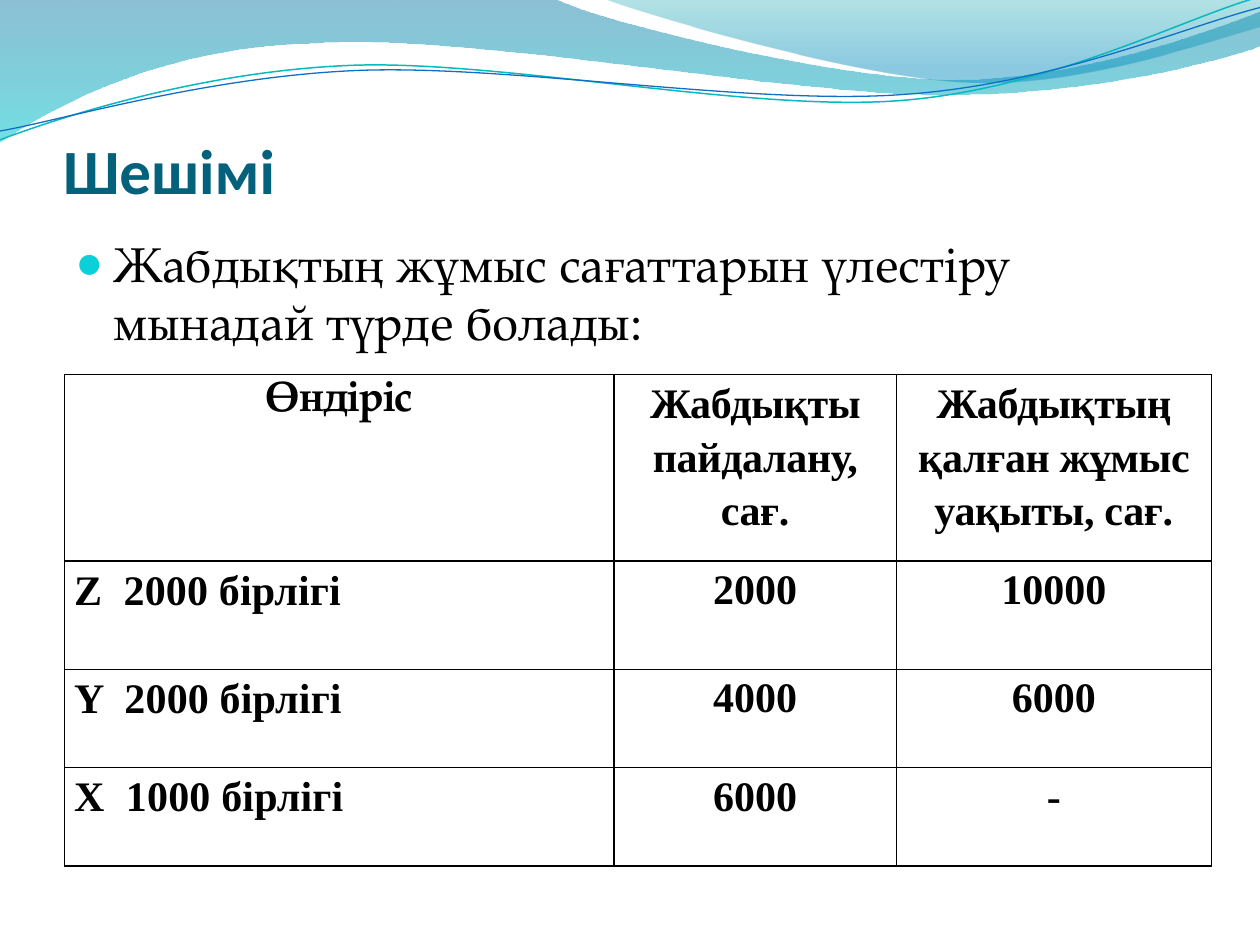
import lxml.etree
import pptx
import pptx.util
import pptx.dml.color
import pptx.enum.text
import pptx.oxml.ns
from pptx.util import Inches, Pt

COLORS = {
    "title": "04617B", "text": "000000", "bullet": "0BD0D9", "border": "000000",
    "deep": "0074A1", "cyan": "00C6CF", "teal": "00A1A9", "sky": "008BBF",
    "teal_line": "0AB8BF", "blue_line": "0F6FC6",
}
SERIF, TIMES = "TeX Gyre Pagella", "Times New Roman"
ALIGN = pptx.enum.text.PP_ALIGN
MARGIN = 0.5
CONTENT_WIDTH = 9
UNITS = 100  # outline units per inch

# Wave outlines in inches: a pair is a straight step, six numbers a Bezier step
BROAD_WAVE = [
    (0, 0), (4.4, -0.01), (4.76, 0.17, 6.64, 0.63, 7.58, 0.63),
    (8.53, 0.63, 9.58, 0.26, 10, 0.09), (10.01, 0.36),
    (9.83, 0.44, 8.7, 0.76, 7.46, 0.75), (6.22, 0.75, 3.82, 0.28, 2.57, 0.34),
    (1.29, 0.36, 0.46, 0.83, -0.01, 1.13), (0, 0)]
RIGHT_WAVE = [
    (4.79, -0.01), (5.09, 0.11, 6.82, 0.62, 7.69, 0.65),
    (8.56, 0.69, 9.61, 0.32, 10, 0.21), (10, 0), (4.79, -0.01)]
TEAL_CURVE = [
    (0, 1.11), (0.48, 0.93, 1.58, 0.57, 2.77, 0.52),
    (3.95, 0.47, 5.93, 0.89, 7.13, 0.8), (8.33, 0.71, 9.38, 0.15, 9.98, -0.02)]
BLUE_CURVE = [
    (0, 1.04), (0.47, 0.96, 1.64, 0.61, 2.83, 0.56),
    (4.03, 0.51, 5.97, 0.84, 7.17, 0.75), (8.36, 0.67, 9.41, 0.21, 10, 0.06)]

COLUMNS = [4.36, 2.24, 2.5]
ROWS = [1.48, 0.86, 0.78, 0.78]
HOURS = [
    ["Өндіріс", "Жабдықты пайдалану, сағ.", "Жабдықтың қалған жұмыс уақыты, сағ."],
    ["Z  2000 бірлігі", "2000", "10000"],
    ["Y  2000 бірлігі", "4000", "6000"],
    ["X  1000 бірлігі", "6000", "-"],
]


def rgb(name):
    return pptx.dml.color.RGBColor.from_string(COLORS[name])


def add_xml(parent, tag, **attributes):
    return lxml.etree.SubElement(parent, pptx.oxml.ns.qn(f"a:{tag}"), attributes)


def style(paragraph, font_name, size, color, bold=False):
    font = paragraph.font
    font.name, font.size, font.bold = font_name, Pt(size), bold
    font.color.rgb = rgb(color)


def add_outline(slide, steps, close):
    steps = [[round(v * UNITS) for v in step] for step in steps]
    ends = [step[-2:] for step in steps]
    builder = slide.shapes.build_freeform(*ends[0], scale=Inches(1) / UNITS)
    builder.add_line_segments(ends[1:], close=close)
    outline = builder.convert_to_shape()
    outline.shadow.inherit = False
    # Bend the straight segments that have control points
    left, top = (min(axis) for axis in zip(*ends))
    segments = list(outline._element.iter(pptx.oxml.ns.qn("a:lnTo")))
    for segment, step in zip(segments, steps[1:]):
        if len(step) == 6:
            bend = add_xml(segment.getparent(), "cubicBezTo")
            for x, y in zip(step[::2], step[1::2]):
                add_xml(bend, "pt", x=str(x - left), y=str(y - top))
            segment.getparent().replace(segment, bend)
    return outline


def add_wave(slide, steps, stops):
    wave = add_outline(slide, steps, True)
    wave.line.fill.background()
    wave.fill.gradient()
    wave.fill.gradient_angle = 270
    for stop, (position, color, _) in zip(wave.fill.gradient_stops, stops):
        stop.position = position
        stop.color.rgb = rgb(color)
    tints = list(wave._element.spPr.iter(pptx.oxml.ns.qn("a:srgbClr")))
    for tint, (_, _, opacity) in zip(tints, stops):
        add_xml(tint, "alpha", val=str(opacity * 1000))


def add_curve(slide, steps, color, width):
    curve = add_outline(slide, steps, False)
    curve.fill.background()
    curve.line.color.rgb = rgb(color)
    curve.line.width = Pt(width)


def set_title(slide, text):
    title = slide.shapes.title
    title.left, title.top = Inches(MARGIN), Inches(0.77)
    title.width, title.height = Inches(CONTENT_WIDTH), Inches(0.87)
    frame = title.text_frame
    frame.text = text
    frame.vertical_anchor = pptx.enum.text.MSO_ANCHOR.BOTTOM
    frame.margin_left = frame.margin_right = frame.margin_bottom = 0
    frame.paragraphs[0].alignment = ALIGN.LEFT
    style(frame.paragraphs[0], "Calibri", 36, "title", True)


def add_bullet(slide, text):
    box = slide.shapes.add_textbox(
        Inches(MARGIN), Inches(1.8), Inches(CONTENT_WIDTH), Inches(5.12))
    frame = box.text_frame
    frame.word_wrap = True
    frame.text = text
    paragraph = frame.paragraphs[0]
    paragraph.space_before = Pt(5.6)
    properties = paragraph._p.get_or_add_pPr()
    properties.set("marL", str(Inches(0.3)))
    properties.set("indent", str(-Inches(0.3)))
    add_xml(add_xml(properties, "buClr"), "srgbClr", val=COLORS["bullet"])
    add_xml(properties, "buSzPct", val="95000")
    add_xml(properties, "buFont", typeface=TIMES)
    add_xml(properties, "buChar", char="●")
    style(paragraph, SERIF, 28, "text")


def set_borders(cell):
    properties = cell._tc.get_or_add_tcPr()
    for side in ("lnL", "lnR", "lnT", "lnB"):
        border = add_xml(properties, side, w=str(Pt(1)))
        add_xml(add_xml(border, "solidFill"), "srgbClr", val=COLORS["border"])


def fill_cell(cell, text, row, column):
    cell.text = text
    paragraph = cell.text_frame.paragraphs[0]
    corner = row == 0 and column == 0
    style(paragraph, SERIF if corner else TIMES, 24, "text", True)
    paragraph.alignment = ALIGN.LEFT if row and column == 0 else ALIGN.CENTER
    # Column headings and row labels have looser lines and adjusted tracking
    if (row == 0) != (column == 0):
        paragraph.line_spacing = 1.15
        cell.margin_left = cell.margin_right = Pt(5.4)
        cell.margin_top = cell.margin_bottom = 0
        tracking = -20 if row == 0 else 10
        paragraph.runs[0]._r.get_or_add_rPr().set("spc", str(tracking))
    set_borders(cell)
    cell.fill.background()


def add_hours_table(slide):
    table = slide.shapes.add_table(
        len(ROWS), len(COLUMNS), Pt(37), Pt(214),
        Inches(sum(COLUMNS)), Inches(sum(ROWS))).table
    table.first_row = table.horz_banding = False
    for column, width in zip(table.columns, COLUMNS):
        column.width = Inches(width)
    for r, (height, texts) in enumerate(zip(ROWS, HOURS)):
        table.rows[r].height = Inches(height)
        for c, text in enumerate(texts):
            fill_cell(table.cell(r, c), text, r, c)


def main():
    deck = pptx.Presentation()
    deck.slide_width, deck.slide_height = Inches(10), Inches(7.5)
    slide = deck.slides.add_slide(deck.slide_layouts[5])

    # Waves along the top edge
    add_wave(slide, BROAD_WAVE, [(0, "deep", 45), (1, "cyan", 55)])
    add_wave(slide, RIGHT_WAVE, [(0, "teal", 30), (0.8, "sky", 45)])
    add_curve(slide, TEAL_CURVE, "teal_line", 0.85)
    add_curve(slide, BLUE_CURVE, "blue_line", 0.75)

    # Heading, lead-in and table
    set_title(slide, "Шешімі")
    add_bullet(slide, "Жабдықтың жұмыс сағаттарын үлестіру мынадай түрде болады:")
    add_hours_table(slide)
    deck.save("out.pptx")


if __name__ == "__main__":
    main()
